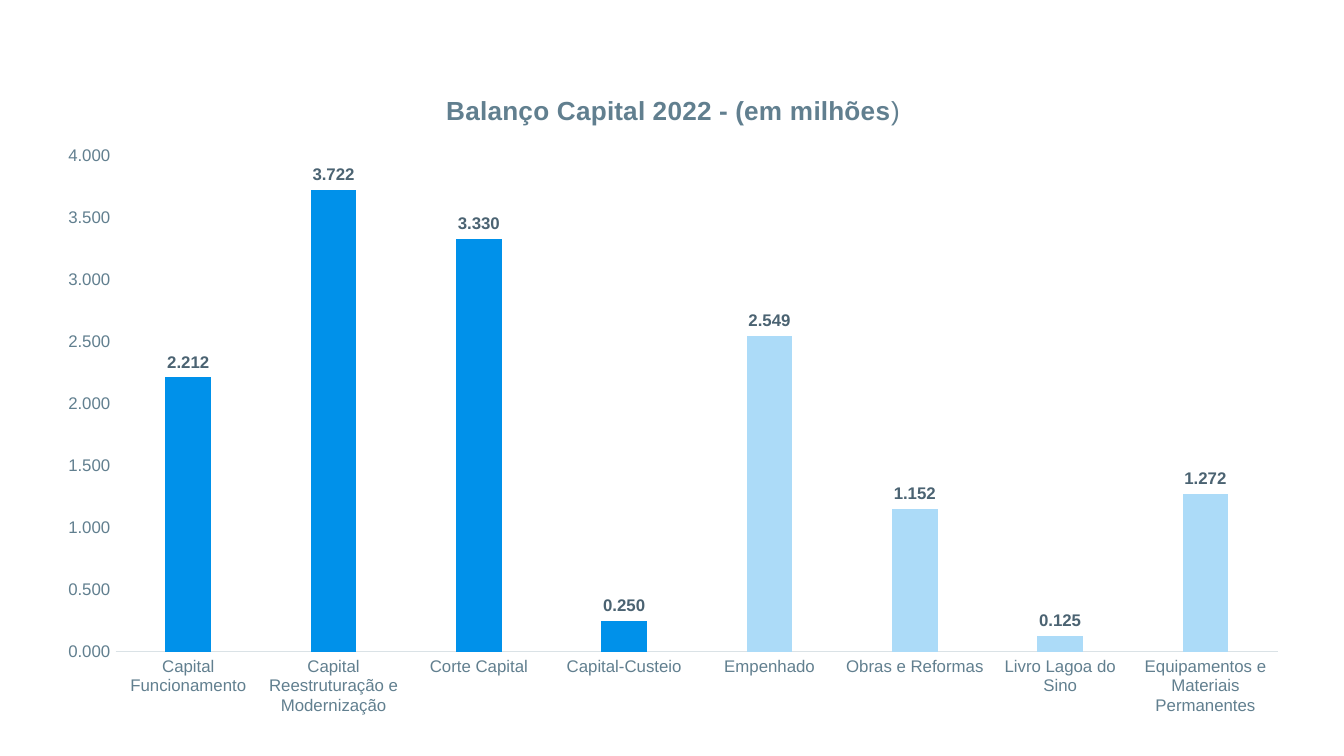
from lxml.etree import SubElement
from pptx import Presentation
from pptx.chart.data import CategoryChartData
from pptx.dml.color import RGBColor
from pptx.enum.chart import XL_CHART_TYPE, XL_LABEL_POSITION, XL_TICK_MARK
from pptx.oxml import parse_xml
from pptx.oxml.ns import nsdecls, qn
from pptx.util import Inches, Pt

DARK = RGBColor(0x26, 0x32, 0x38)
SLATE = RGBColor(0x61, 0x7F, 0x8F)
LABEL = RGBColor(0x4B, 0x63, 0x72)
AXIS_LINE = RGBColor(0xDA, 0xE2, 0xE6)
BLUE = RGBColor(0x00, 0x91, 0xEA)
LIGHT_BLUE = RGBColor(0xAC, 0xDB, 0xF8)

CHART_WIDTH = Inches(9.38)
CHART_HEIGHT = Inches(4.91)

BUDGET = {
    "Capital Funcionamento": 2.212,
    "Capital Reestruturação e Modernização": 3.722,
    "Corte Capital": 3.33,
    "Capital-Custeio": 0.25,
}
SPENDING = {
    "Empenhado": 2.549,
    "Obras e Reformas": 1.152,
    "Livro Lagoa do Sino": 0.125,
    "Equipamentos e Materiais Permanentes": 1.272,
}


def style_font(font, size, color, bold=False):
    font.name = "Arial"
    font.size = Pt(size)
    font.color.rgb = color
    font.bold = bold


def set_layout(element, index, inner=False, **lengths):
    for layout in element.findall(qn("c:layout")):
        element.remove(layout)
    layout = parse_xml(f"<c:layout {nsdecls('c')}><c:manualLayout/></c:layout>")
    manual = layout[0]
    if inner:
        SubElement(manual, qn("c:layoutTarget")).set("val", "inner")
    for key in ("x", "y"):
        SubElement(manual, qn(f"c:{key}Mode")).set("val", "edge")
    for key, length in lengths.items():
        whole = CHART_WIDTH if key in ("x", "w") else CHART_HEIGHT
        SubElement(manual, qn(f"c:{key}")).set("val", str(length / whole))
    element.insert(index, layout)


def add_budget_chart(slide):
    data = CategoryChartData(number_format="0.000")
    values = BUDGET | SPENDING
    data.categories = list(values)
    data.add_series("Series 1", list(values.values()))
    frame = slide.shapes.add_chart(
        XL_CHART_TYPE.COLUMN_CLUSTERED,
        Inches(0.32), Inches(0.52), CHART_WIDTH, CHART_HEIGHT, data,
    )
    chart = frame.chart
    style_font(chart.font, 10, DARK)
    chart.has_legend = False
    set_layout(chart.element.find(f".//{qn('c:plotArea')}"), 0, inner=True,
               x=Inches(0.54), y=Inches(0.64), w=Inches(8.65), h=Inches(3.69))
    return chart


def style_title(chart):
    chart.has_title = True
    paragraph = chart.chart_title.text_frame.paragraphs[0]
    for text, bold in (("Balanço Capital 2022 - (em milhões", True), (")", False)):
        run = paragraph.add_run()
        run.text = text
        style_font(run.font, 14, SLATE, bold)
    chart.chart_title.include_in_layout = False
    set_layout(chart.element.find(f".//{qn('c:title')}"), 1,
               x=Inches(2.97), y=Inches(0.15))


def style_axes(chart):
    for axis in (chart.category_axis, chart.value_axis):
        axis.major_tick_mark = XL_TICK_MARK.NONE
        axis.minor_tick_mark = XL_TICK_MARK.NONE
        axis.has_major_gridlines = False
        style_font(axis.tick_labels.font, 9, SLATE)
    line = chart.category_axis.format.line
    line.color.rgb = AXIS_LINE
    line.width = Pt(0.75)
    value_axis = chart.value_axis
    value_axis.format.line.fill.background()
    value_axis.minimum_scale = 0
    value_axis.maximum_scale = 4
    value_axis.major_unit = 0.5
    value_axis.tick_labels.number_format = "0.000"
    value_axis.tick_labels.number_format_is_linked = False


def style_columns(chart):
    plot = chart.plots[0]
    plot.gap_width = 219
    plot.overlap = -27
    plot.vary_by_categories = False
    series = plot.series[0]
    series.format.fill.solid()
    series.format.fill.fore_color.rgb = BLUE
    for index in range(len(BUDGET), len(BUDGET) + len(SPENDING)):
        fill = series.points[index].format.fill
        fill.solid()
        fill.fore_color.rgb = LIGHT_BLUE
    labels = series.data_labels
    labels.show_value = True
    labels.position = XL_LABEL_POSITION.OUTSIDE_END
    labels.number_format = "0.000"
    labels.number_format_is_linked = False
    style_font(labels.font, 9, LABEL, bold=True)


def main():
    presentation = Presentation()
    presentation.slide_width = Inches(10)
    presentation.slide_height = Inches(10) * 9 // 16
    slide = presentation.slides.add_slide(presentation.slide_layouts[6])
    chart = add_budget_chart(slide)
    style_title(chart)
    style_axes(chart)
    style_columns(chart)
    presentation.save("out.pptx")


if __name__ == "__main__":
    main()
